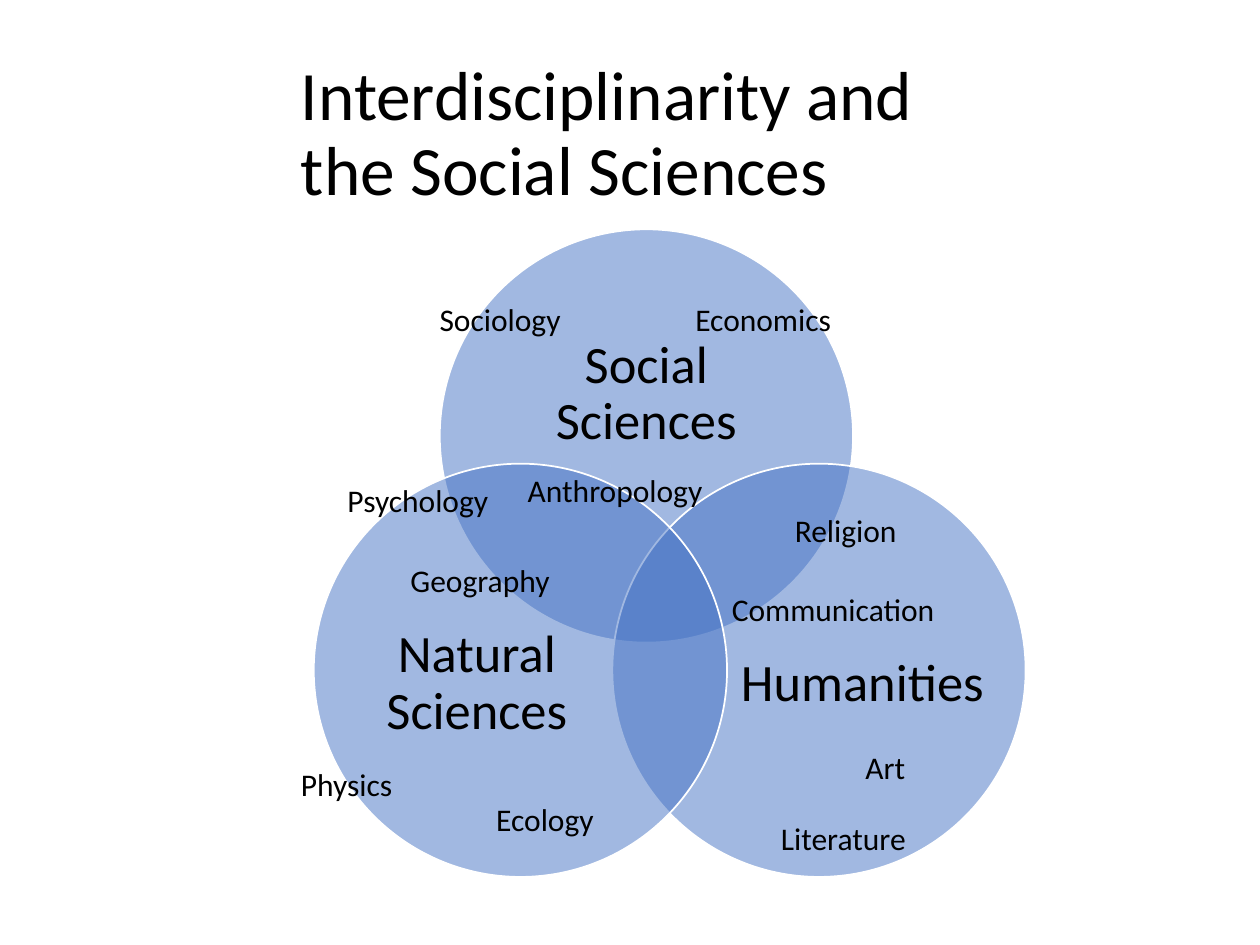
from dataclasses import dataclass

from lxml import etree
from pptx import Presentation
from pptx import util as u
from pptx.dml.color import RGBColor
from pptx.enum import shapes, text
from pptx.oxml.ns import qn
from pptx.slide import Slide
from pptx.text.text import TextFrame

BLACK = RGBColor(0x00, 0x00, 0x00)
WHITE = RGBColor(0xFF, 0xFF, 0xFF)
BLUE = RGBColor(0x44, 0x72, 0xC4)
FONT = "Calibri"
DIAMETER = 3.28
TOPIC_WIDTH, TOPIC_HEIGHT = 2.56, 0.4


@dataclass(frozen=True)
class Box:
    left: float
    top: float
    width: float
    height: float

    def lengths(self) -> list[u.Length]:
        return [u.Inches(n) for n in (self.left, self.top, self.width, self.height)]


@dataclass(frozen=True)
class Field:
    name: str
    left: float
    top: float
    label: Box


@dataclass(frozen=True)
class Topic:
    name: str
    left: float
    top: float


FIELDS = [
    Field("Social Sciences", 3.49, 1.82, Box(3.93, 2.39, 2.4, 1.48)),
    Field("Humanities", 4.86, 3.68, Box(5.86, 4.53, 1.97, 1.8)),
    Field("Natural Sciences", 2.49, 3.68, Box(2.8, 4.53, 1.97, 1.8)),
]

TOPICS = [
    Topic("Psychology", 2.66, 3.77),
    Topic("Anthropology", 4.09, 3.69),
    Topic("Religion", 6.21, 4.01),
    Topic("Communication", 5.71, 4.63),
    Topic("Art", 6.77, 5.89),
    Topic("Literature", 6.1, 6.45),
    Topic("Economics", 5.42, 2.33),
    Topic("Geography", 3.16, 4.4),
    Topic("Sociology", 3.39, 2.33),
    Topic("Ecology", 3.84, 6.3),
    Topic("Physics", 2.29, 6.02),
]


def add_text(slide: Slide, wording: str, box: Box, size: float,
             align: text.PP_ALIGN = text.PP_ALIGN.LEFT,
             anchor: text.MSO_ANCHOR = text.MSO_ANCHOR.MIDDLE,
             line_spacing: float = 0.9) -> TextFrame:
    frame = slide.shapes.add_textbox(*box.lengths()).text_frame
    frame.word_wrap = True
    frame.vertical_anchor = anchor
    frame.text = wording
    paragraph = frame.paragraphs[0]
    paragraph.alignment = align
    paragraph.line_spacing = line_spacing
    font = paragraph.runs[0].font
    font.name, font.size, font.color.rgb = FONT, u.Pt(size), BLACK
    return frame


def add_field(slide: Slide, field: Field) -> None:
    """Draw a half-transparent circle with its centred name."""
    circle = slide.shapes.add_shape(
        shapes.MSO_SHAPE.OVAL, *Box(field.left, field.top, DIAMETER, DIAMETER).lengths())
    circle.shadow.inherit = False
    circle.fill.solid()
    circle.fill.fore_color.rgb = BLUE
    color = circle.element.spPr.find(qn("a:solidFill"))[0]
    etree.SubElement(color, qn("a:alpha"), val="50000")
    circle.line.color.rgb = WHITE
    circle.line.width = u.Pt(1)

    frame = add_text(slide, field.name, field.label, 30, text.PP_ALIGN.CENTER)
    frame.margin_left = frame.margin_right = frame.margin_top = frame.margin_bottom = 0


def add_topic(slide: Slide, topic: Topic) -> None:
    box = Box(topic.left, topic.top, TOPIC_WIDTH, TOPIC_HEIGHT)
    frame = add_text(slide, topic.name, box, 18, anchor=text.MSO_ANCHOR.TOP, line_spacing=1.0)
    frame.auto_size = text.MSO_AUTO_SIZE.SHAPE_TO_FIT_TEXT


def main() -> None:
    presentation = Presentation()
    presentation.slide_width, presentation.slide_height = u.Inches(10), u.Inches(7.5)
    slide = presentation.slides.add_slide(presentation.slide_layouts[6])
    add_text(slide, "Interdisciplinarity and the Social Sciences", Box(2.29, 0.47, 5.6, 1.21), 39.6)
    for field in FIELDS:
        add_field(slide, field)
    for topic in TOPICS:
        add_topic(slide, topic)
    presentation.save("out.pptx")


if __name__ == "__main__":
    main()
